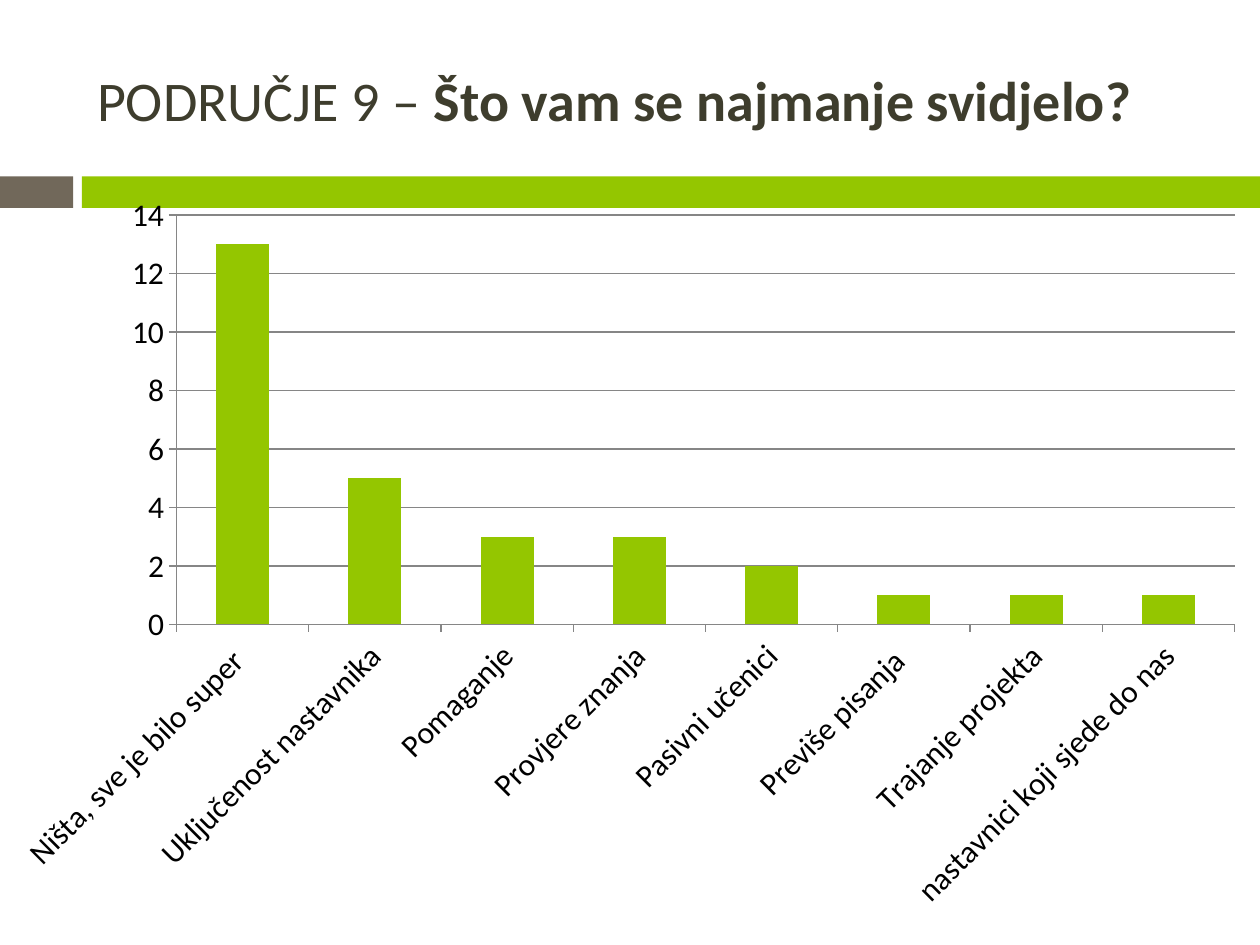
from lxml import etree
from pptx import Presentation
from pptx.chart.data import CategoryChartData
from pptx.dml.color import RGBColor
from pptx.enum.chart import XL_CHART_TYPE, XL_TICK_MARK
from pptx.enum.shapes import MSO_SHAPE
from pptx.enum.text import MSO_ANCHOR, MSO_AUTO_SIZE, PP_ALIGN
from pptx.oxml.ns import qn
from pptx.util import Inches, Pt

RECTANGLE = MSO_SHAPE.RECTANGLE
COLUMNS = XL_CHART_TYPE.COLUMN_CLUSTERED
TICK_OUT = XL_TICK_MARK.OUTSIDE
MIDDLE = MSO_ANCHOR.MIDDLE
NO_FIT = MSO_AUTO_SIZE.NONE
LEFT = PP_ALIGN.LEFT

FONT = "Calibri"
GREEN, BROWN, DARK = "94C600", "71685A", "3E3D2D"
BLACK, GRAY = "000000", "868686"

ANSWERS = {
    "Ništa, sve je bilo super ": 13,
    "Uključenost nastavnika": 5,
    "Pomaganje": 3,
    "Provjere znanja": 3,
    "Pasivni učenici": 2,
    "Previše pisanja ": 1,
    "Trajanje projekta": 1,
    "nastavnici koji sjede do nas": 1,
}


def color(value):
    return RGBColor.from_string(value)


class SlideBuilder:
    """Holds the style and the current slide."""

    def __init__(self, deck):
        self.font = FONT
        self.slide = deck.slides.add_slide(deck.slide_layouts[5])

    def style(self, font, size, ink, bold=False):
        font.name = self.font
        font.size = Pt(size)
        font.bold = bold
        font.color.rgb = color(ink)

    def place(self, shape, left, top, width, height):
        shape.left, shape.top = Inches(left), Inches(top)
        shape.width, shape.height = Inches(width), Inches(height)

    def bar(self, left, top, width, height, fill):
        shape = self.slide.shapes.add_shape(
            RECTANGLE, Inches(left), Inches(top), Inches(width), Inches(height))
        shape.shadow.inherit = False
        shape.fill.solid()
        shape.fill.fore_color.rgb = color(fill)
        shape.line.fill.background()

    def title(self, area, parts):
        box = self.slide.shapes.title
        self.place(box, *area)
        frame = box.text_frame
        frame.word_wrap = True
        frame.auto_size = NO_FIT
        frame.vertical_anchor = MIDDLE
        para = frame.paragraphs[0]
        para.alignment = LEFT
        for text, bold in parts:
            span = para.add_run()
            span.text = text
            self.style(span.font, 32, DARK, bold)

    def column_chart(self, area, name, values, plot):
        data = CategoryChartData()
        data.categories = list(values)
        data.add_series(name, list(values.values()))
        chart = self.slide.shapes.add_chart(
            COLUMNS, *(Inches(length) for length in area), data).chart
        chart.has_legend = False
        chart.has_title = False
        self.style(chart.font, 18, BLACK)

        # Columns
        columns = chart.plots[0]
        columns.gap_width = 150
        columns.vary_by_categories = False
        fill = columns.series[0].format.fill
        fill.solid()
        fill.fore_color.rgb = color(GREEN)

        # Axes and gridlines
        value_axis, category_axis = chart.value_axis, chart.category_axis
        value_axis.minimum_scale, value_axis.maximum_scale = 0, 14
        value_axis.major_unit = 2
        value_axis.has_major_gridlines = True
        category_axis.has_major_gridlines = False
        for axis in (value_axis, category_axis):
            axis.major_tick_mark = TICK_OUT
            self.style(axis.tick_labels.font, 18, BLACK)
        for part in (value_axis, category_axis, value_axis.major_gridlines):
            part.format.line.color.rgb = color(GRAY)
            part.format.line.width = Pt(0.75)

        # Slanted category labels
        labels = category_axis.tick_labels.font
        body = chart.element.find(".//" + qn("c:catAx")).find(
            qn("c:txPr") + "/" + qn("a:bodyPr"))
        body.set("rot", str(-45 * 60000))
        labels.bold = False

        # Plot area, as fractions of the chart
        plot_area = chart.element.find(".//" + qn("c:plotArea"))
        layout = plot_area.find(qn("c:layout"))
        if layout is None:
            layout = etree.Element(qn("c:layout"))
            plot_area.insert(0, layout)
        manual = etree.SubElement(layout, qn("c:manualLayout"))
        settings = [("layoutTarget", "inner"), ("xMode", "edge"), ("yMode", "edge")]
        for tag, value in settings + list(zip("xywh", plot)):
            etree.SubElement(manual, qn("c:" + tag)).set("val", str(value))


def main():
    deck = Presentation()
    deck.slide_width, deck.slide_height = Inches(10), Inches(7.5)
    builder = SlideBuilder(deck)

    # Divider band
    builder.bar(0, 1.4, 0.58, 0.25, BROWN)
    builder.bar(0.65, 1.4, 9.35, 0.25, GREEN)

    # Heading
    builder.title((0.67, 0.25, 8.92, 1.08), [
        ("PODRUČJE 9 – ", False),
        ("Što vam se najmanje svidjelo?", True),
    ])

    # Answers
    builder.column_chart((0, 1.47, 10, 5.91), "Series 1", ANSWERS,
                         plot=(0.14, 0.04, 0.84, 0.55))

    deck.save("out.pptx")


if __name__ == "__main__":
    main()
